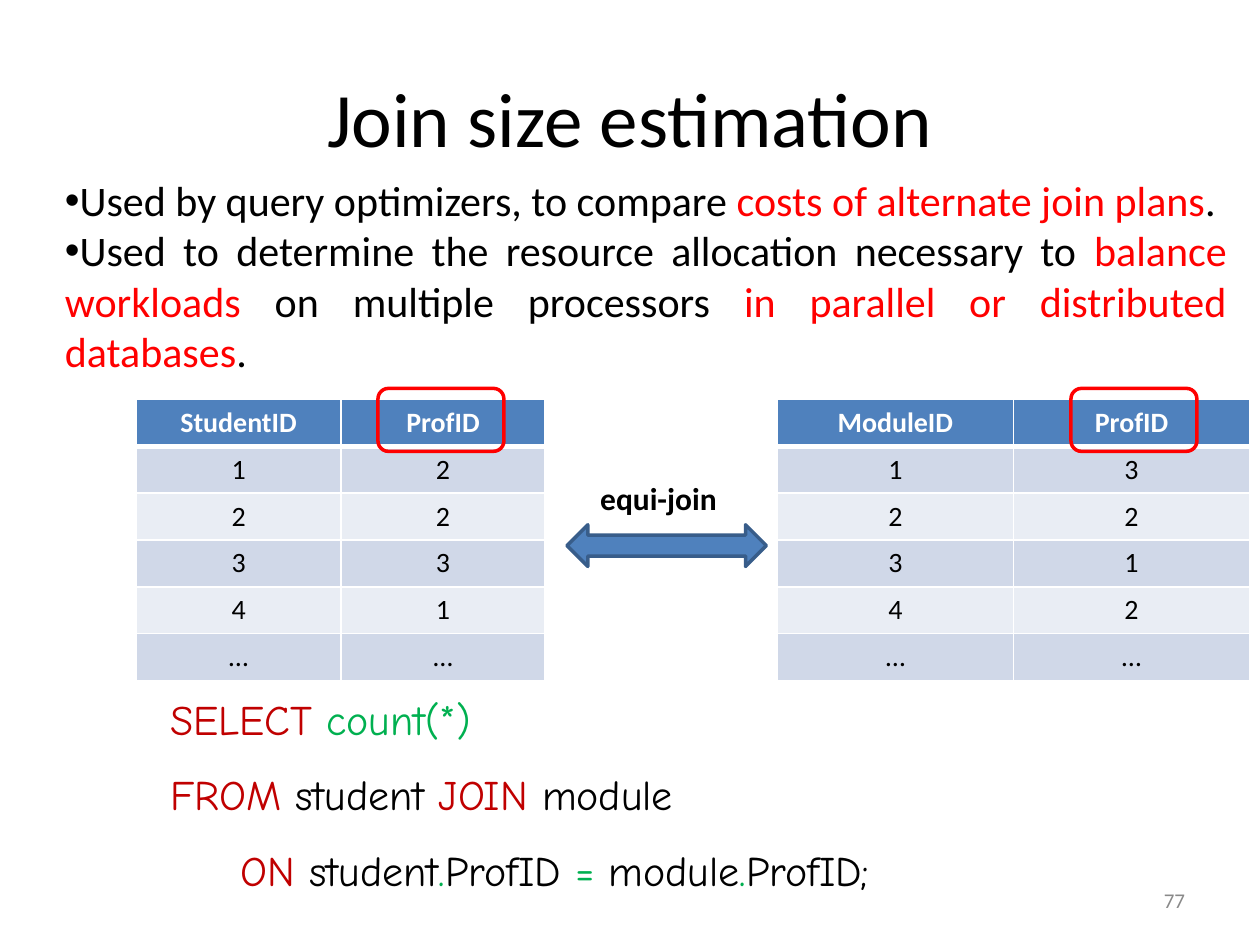
from lxml import etree
from pptx import Presentation
from pptx.dml.color import RGBColor
from pptx.enum.shapes import MSO_SHAPE
from pptx.enum.text import MSO_ANCHOR, PP_ALIGN
from pptx.oxml.ns import qn
from pptx.util import Cm, Pt

LEFT, CENTER, RIGHT, JUSTIFY = PP_ALIGN.LEFT, PP_ALIGN.CENTER, PP_ALIGN.RIGHT, PP_ALIGN.JUSTIFY
TOP, MIDDLE = MSO_ANCHOR.TOP, MSO_ANCHOR.MIDDLE
ROUNDED, DOUBLE_ARROW = MSO_SHAPE.ROUNDED_RECTANGLE, MSO_SHAPE.LEFT_RIGHT_ARROW

BLACK, WHITE, RED, GRAY = "000000", "FFFFFF", "FF0000", "898989"
KEYWORD, SYMBOL = "C00000", "00B050"
BLUE, DARK_BLUE, BANDS = "4F81BD", "385D8A", ("D0D8E8", "E9EDF4")

# Each paragraph is a list of (text, colour) runs.
TITLE = [[("Join size estimation", BLACK)]]
USES = [
    [("Used by query optimizers, to compare ", BLACK),
     ("costs of alternate join plans", RED), (".", BLACK)],
    [("Used to determine the resource allocation necessary to ", BLACK),
     ("balance workloads", RED), (" on multiple processors ", BLACK),
     ("in parallel or distributed databases", RED), (".", BLACK)],
]
QUERY = [
    [("SELECT ", KEYWORD), ("count(*)", SYMBOL)],
    [("FROM ", KEYWORD), ("student ", BLACK), ("JOIN", KEYWORD), (" module", BLACK)],
    [("ON ", KEYWORD), ("student", BLACK), (".", SYMBOL), ("ProfID", BLACK),
     (" = ", SYMBOL), ("module", BLACK), (".", SYMBOL), ("ProfID;", BLACK)],
]
JOIN_LABEL = [[("equi-join", BLACK)]]
PAGE_NUMBER = [[("77", GRAY)]]

# left, top, width, height in cm; paragraphs; format
TEXTS = [
    ((1.27, 0.76, 22.86, 3.18), TITLE, {"size": 44, "align": CENTER, "anchor": MIDDLE}),
    ((1.06, 3.39, 23.92, 4.32), USES, {"size": 24, "align": JUSTIFY, "bullet": "•"}),
    ((3.18, 13.34, 16.54, 4.87), QUERY,
     {"size": 24, "font": "Comic Neue", "spacing": 1.5, "indents": (0, 0, 1.42)}),
    ((11.85, 9.53, 3.39, 1.02), JOIN_LABEL, {"size": 18, "bold": True}),
    ((18.21, 17.65, 5.93, 1.01), PAGE_NUMBER, {"size": 12, "align": RIGHT, "anchor": MIDDLE}),
]

TABLE_TOP, ROW_HEIGHT = 8.05, 0.94
# left and column width in cm; rows
TABLES = [
    (2.75, 4.12, [("StudentID", "ProfID"), ("1", "2"), ("2", "2"),
                  ("3", "3"), ("4", "1"), ("…", "…")]),
    (15.67, 4.76, [("ModuleID", "ProfID"), ("1", "3"), ("2", "2"),
                   ("3", "1"), ("4", "2"), ("…", "…")]),
]

# preset, box in cm, fill, line, adjustments
SHAPES = [
    (DOUBLE_ARROW, (11.43, 10.58, 4.02, 0.84), BLUE, DARK_BLUE, (0.5, 0.5)),
    (ROUNDED, (7.62, 7.83, 2.54, 1.27), None, RED, (0.167,)),
    (ROUNDED, (21.59, 7.83, 2.54, 1.27), None, RED, (0.167,)),
]


def color(value):
    return RGBColor.from_string(value)


def cm_box(box):
    return [Cm(length) for length in box]


def add_run(paragraph, text, run_color, **formats):
    run = paragraph.add_run()
    run.text = text
    run.font.color.rgb = color(run_color)
    for name, value in formats.items():
        setattr(run.font, name, value)


def add_text(slide, box, paragraphs, style):
    frame = slide.shapes.add_textbox(*cm_box(box)).text_frame
    frame.word_wrap = True
    frame.vertical_anchor = style.get("anchor", TOP)
    indents = style.get("indents", (0,) * len(paragraphs))
    for index, (runs, indent) in enumerate(zip(paragraphs, indents)):
        paragraph = frame.add_paragraph() if index else frame.paragraphs[0]
        paragraph.alignment = style.get("align", LEFT)
        paragraph.line_spacing = style.get("spacing", 1.0)
        properties = paragraph._p.get_or_add_pPr()
        if indent:
            properties.set("marL", str(Cm(indent)))
        if "bullet" in style:
            etree.SubElement(properties, qn("a:buFont"), typeface="Arial")
            etree.SubElement(properties, qn("a:buChar"), char=style["bullet"])
        for text, run_color in runs:
            add_run(paragraph, text, run_color, name=style.get("font", "Calibri"),
                    size=Pt(style["size"]), bold=style.get("bold", False))


def set_borders(cell, widths):
    """Draw white borders; widths are points by side, in schema order L, R, T, B."""
    properties = cell._tc.get_or_add_tcPr()
    for index, (side, width) in enumerate(widths.items()):
        line = etree.Element(qn(f"a:ln{side}"), w=str(Pt(width)))
        fill = etree.SubElement(line, qn("a:solidFill"))
        etree.SubElement(fill, qn("a:srgbClr"), val=WHITE)
        properties.insert(index, line)


def add_data_table(slide, left, column_width, rows):
    columns = len(rows[0])
    box = (left, TABLE_TOP, column_width * columns, ROW_HEIGHT * len(rows))
    table = slide.shapes.add_table(len(rows), columns, *cm_box(box)).table
    for column in table.columns:
        column.width = Cm(column_width)
    for row_index, values in enumerate(rows):
        table.rows[row_index].height = Cm(ROW_HEIGHT)
        header = row_index == 0
        for column_index, text in enumerate(values):
            cell = table.cell(row_index, column_index)
            cell.fill.solid()
            cell.fill.fore_color.rgb = color(BLUE if header else BANDS[(row_index - 1) % 2])
            set_borders(cell, {"L": 1, "R": 1, "T": 3 if row_index == 1 else 1,
                               "B": 3 if header else 1})
            paragraph = cell.text_frame.paragraphs[0]
            paragraph.alignment = CENTER
            add_run(paragraph, text, WHITE if header else BLACK,
                    name="Calibri", size=Pt(16), bold=header)


def add_outlined_shape(slide, preset, box, fill, line, adjustments):
    shape = slide.shapes.add_shape(preset, *cm_box(box))
    shape.shadow.inherit = False
    for index, value in enumerate(adjustments):
        shape.adjustments[index] = value
    if fill:
        shape.fill.solid()
        shape.fill.fore_color.rgb = color(fill)
    else:
        shape.fill.background()
    shape.line.color.rgb = color(line)
    shape.line.width = Pt(2)


def main():
    presentation = Presentation()
    presentation.slide_width, presentation.slide_height = Cm(25.4), Cm(19.05)
    slide = presentation.slides.add_slide(presentation.slide_layouts[6])
    for table in TABLES:
        add_data_table(slide, *table)
    for shape in SHAPES:
        add_outlined_shape(slide, *shape)
    for text in TEXTS:
        add_text(slide, *text)
    presentation.save("out.pptx")


if __name__ == "__main__":
    main()
